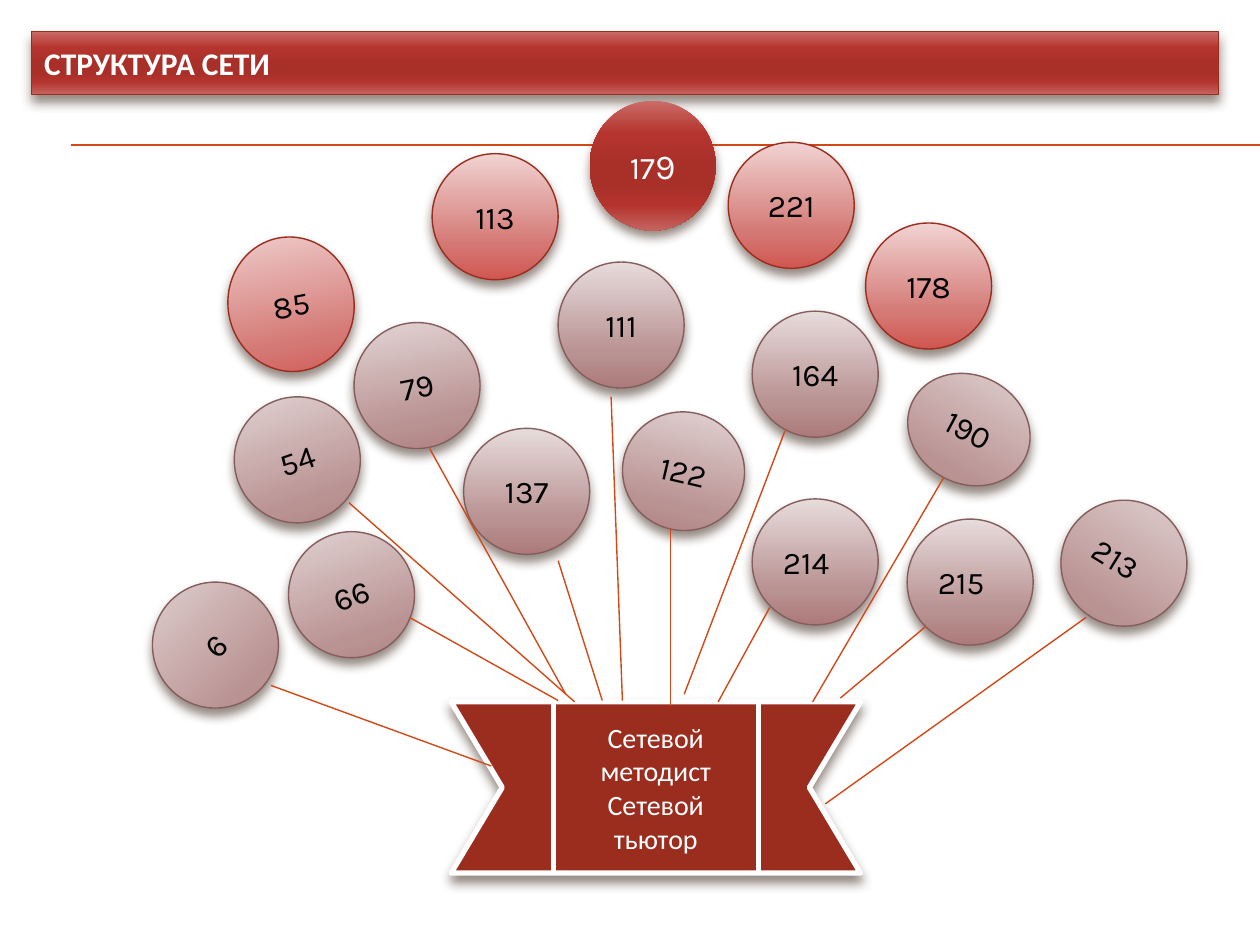
"""Build the network structure slide: numbered circles tied to a central ribbon."""
from pptx import Presentation
from pptx.dml.color import RGBColor
from pptx.enum.shapes import MSO_CONNECTOR, MSO_SHAPE
from pptx.enum.text import MSO_ANCHOR, PP_ALIGN
from pptx.oxml import parse_xml
from pptx.oxml.ns import nsdecls, qn
from pptx.util import Inches, Pt

STRAIGHT, OVAL, RIBBON = MSO_CONNECTOR.STRAIGHT, MSO_SHAPE.OVAL, MSO_SHAPE.UP_RIBBON
LEFT, CENTER, MIDDLE = PP_ALIGN.LEFT, PP_ALIGN.CENTER, MSO_ANCHOR.MIDDLE
rgb = RGBColor.from_string

WHITE, BLACK, BRICK, ORANGE, MAUVE, SHADE = "FFFFFF", "000000", "9B2D1F", "D34817", "855D5D", "4E3B30"
DEEP = [(0, "CA6C68"), (25, "B5352E"), (50, "A92F29"), (65, "A92F29"), (80, "B4342D"), (100, "C4635F")]
RED = [(0, "F0D3D2"), (72, "D47874"), (100, "D15650")]
GREY = [(0, "E7DBDB"), (72, "B99292"), (100, "AD7A7A")]

prs = Presentation()
prs.slide_width, prs.slide_height = Inches(10), Inches(7.5)
s = prs.slides.add_slide(prs.slide_layouts[5])
CELL = prs.slide_width // 100


def style(sp, stops, outline, width=0.79):
    """Give a shape a solid or gradient fill, an outline and a soft shadow."""
    sp.fill.solid()
    sp.fill.fore_color.rgb = rgb(stops[0][1])
    spPr = sp._element.spPr
    if len(stops) > 1:
        gs = "".join(f'<a:gs pos="{pos * 1000}"><a:srgbClr val="{c}"/></a:gs>' for pos, c in stops)
        spPr.replace(spPr.find(qn("a:solidFill")), parse_xml(
            f'<a:gradFill {nsdecls("a")} rotWithShape="1"><a:gsLst>{gs}</a:gsLst>'
            '<a:lin ang="5400000" scaled="0"/></a:gradFill>'))
    if outline:
        sp.line.color.rgb = rgb(outline)
        sp.line.width = Pt(width)
    else:
        sp.line.fill.background()
    sp.shadow.inherit = False
    spPr.find(qn("a:effectLst")).append(parse_xml(
        f'<a:outerShdw {nsdecls("a")} blurRad="{Pt(6)}" dist="{Pt(4)}" dir="5400000" rotWithShape="0">'
        f'<a:srgbClr val="{SHADE}"><a:alpha val="60000"/></a:srgbClr></a:outerShdw>'))
    sp.text_frame.vertical_anchor = MIDDLE


def connect(ends, width):
    """Draw a plain orange line between two grid points."""
    line = s.shapes.add_connector(STRAIGHT, *[int(n * CELL) for n in ends])
    line.line.color.rgb = rgb(ORANGE)
    line.line.width = Pt(width)
    line._element.spPr.append(parse_xml(f'<a:effectLst {nsdecls("a")}/>'))


title = s.shapes.title
title.left, title.top, title.width, title.height = [int(n * CELL) for n in (2.5, 2.5, 94.2, 5)]
style(title, DEEP, BRICK)
title.text_frame.text = "СТРУКТУРА СЕТИ"
p = title.text_frame.paragraphs[0]
p.alignment = LEFT
p.font.name, p.font.size, p.font.bold = "Calibri", Pt(18), True
p.font.color.rgb = rgb(WHITE)

for y in (11.5, 11.55):
    connect((5.6, y, 100, y), 0.75)

palettes = [
    (DEEP, None, WHITE, [("179", 46.8, 8, 0)]),
    (RED, BRICK, BLACK, [
        ("85", 18.1, 18.8, -11.1), ("113", 34.3, 12.2, 0),
        ("221", 57.8, 11.3, 0), ("178", 68.7, 17.7, 0),
    ]),
    (GREY, MAUVE, BLACK, [
        ("6", 12.1, 46.2, -44), ("66", 22.9, 42.2, -19.2), ("54", 18.6, 31.5, -19.2),
        ("79", 28.1, 25.6, -11.1), ("137", 36.8, 34, 0), ("111", 44.3, 20.8, 0),
        ("122", 49.4, 32.7, 13.3), ("164", 59.7, 24.7, 0), ("214", 59.7, 39.6, 0),
        ("190", 71.9, 29.8, 28), ("215", 72, 41.2, 0), ("213", 84.2, 39.7, 31.7),
    ]),
]
round_size = (10, 10)
odd_sizes = {"179": (10, 10.3), "85": (10, 10.7), "122": (9.7, 9.4), "190": (10, 8.6)}
mixed_text = {"179": [("17", 18), ("9", 20)]}
left_aligned = {"213", "214", "215"}

for stops, outline, ink, circles in palettes:
    for number, x, y, turn in circles:
        w, h = odd_sizes.get(number, round_size)
        sp = s.shapes.add_shape(OVAL, *[int(n * CELL) for n in (x, y, w, h)])
        sp.rotation = turn
        style(sp, stops, outline)
        p = sp.text_frame.paragraphs[0]
        p.alignment = LEFT if number in left_aligned else CENTER
        p.font.name = "Karla"
        p.font.color.rgb = rgb(ink)
        for text, size in mixed_text.get(number, [(number, 18)]):
            r = p.add_run()
            r.text = text
            r.font.size = Pt(size)

ribbon = s.shapes.add_shape(RIBBON, *[int(n * CELL) for n in (35.8, 55.7, 32.5, 13.6)])
ribbon.adjustments[0], ribbon.adjustments[1] = 0, 0.5
style(ribbon, [(0, BRICK)], WHITE, 3)
ribbon.text_frame.text = "Сетевой методист\nСетевой тьютор"
for p in ribbon.text_frame.paragraphs:
    p.alignment = CENTER
    p.font.name, p.font.size = "Calibri", Pt(16)
    p.font.color.rgb = rgb(WHITE)

stems = {
    "6": (21.5, 54.4, 39, 60.8), "66": (32.5, 49, 44.3, 55.6), "54": (27.7, 39.9, 45.6, 55.7),
    "79": (34.1, 35.6, 44.9, 55.1), "137": (44.3, 44.5, 47.8, 55.6), "111": (48.5, 31.5, 49.4, 55.6),
    "122": (53.2, 42, 53.2, 56), "164": (62.3, 34.2, 54.3, 55.1), "214": (61.1, 48.2, 57, 55.7),
    "190": (74.9, 37.9, 64.5, 55.7), "215": (73.5, 49.7, 66.7, 55.4), "213": (86.2, 49, 65.5, 63.8),
}
for ends in stems.values():
    connect(ends, 0.79)

prs.save("out.pptx")
